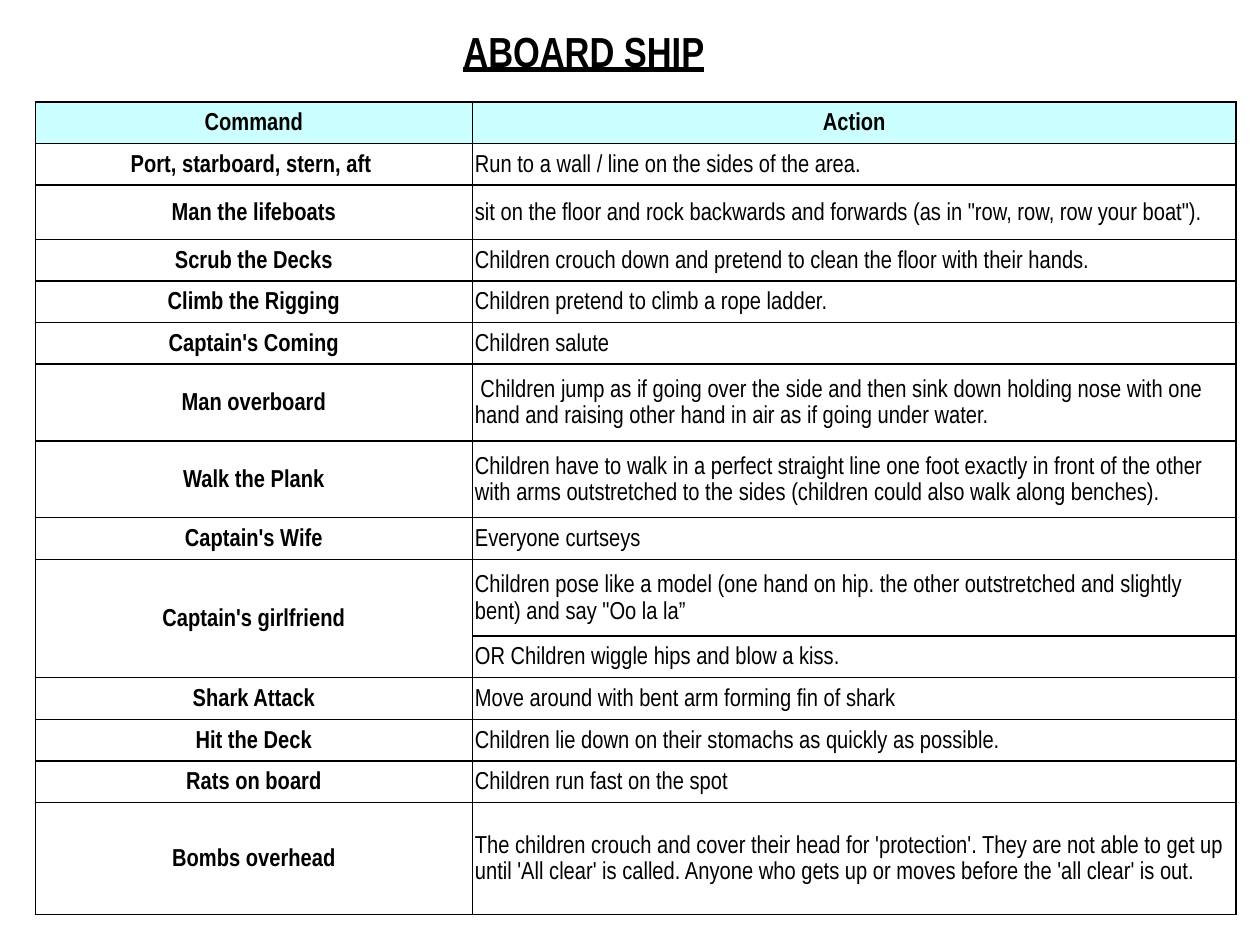
from pptx import Presentation
from pptx.dml.color import RGBColor
from pptx.enum.text import MSO_ANCHOR, PP_ALIGN
from pptx.oxml import parse_xml
from pptx.oxml.ns import nsdecls
from pptx.util import Inches, Pt

LEFT, CENTER = PP_ALIGN.LEFT, PP_ALIGN.CENTER
TOP, MIDDLE = MSO_ANCHOR.TOP, MSO_ANCHOR.MIDDLE

THEME = {
    "font": "Arial Narrow",
    "ink": RGBColor.from_string("000000"),
    "head": RGBColor.from_string("CCFFFF"),
    "title": 24,
    "body": 14,
}


def write(frame, text, size=THEME["body"], bold=False, line=False,
          align=LEFT, gap=None):
    frame.word_wrap = True
    para = frame.paragraphs[0]
    para.alignment = align
    para.line_spacing = gap
    run = para.add_run()
    run.text = text
    font = run.font
    font.name, font.size = THEME["font"], Pt(size)
    font.bold, font.underline = bold, line
    font.color.rgb = THEME["ink"]


def border(cell):
    props = cell._tc.get_or_add_tcPr()
    for pos, side in enumerate(("lnL", "lnR", "lnT", "lnB")):
        props.insert(pos, parse_xml(
            f'<a:{side} {nsdecls("a")} w="{Pt(1)}"><a:solidFill>'
            f'<a:srgbClr val="{THEME["ink"]}"/></a:solidFill></a:{side}>'))


# Command, action and row height; an empty command joins the row above
ROWS = [
    ("Command", "Action", 0.33),
    ("Port, starboard, stern, aft ",
     "Run to a wall / line on the sides of the area.", 0.33),
    ("Man the lifeboats",
     'sit on the floor and rock backwards and forwards '
     '(as in "row, row, row your boat").', 0.43),
    ("Scrub the Decks",
     "Children crouch down and pretend to clean the floor "
     "with their hands.", 0.33),
    ("Climb the Rigging", "Children pretend to climb a rope ladder.", 0.33),
    ("Captain's Coming", "Children salute", 0.33),
    ("Man overboard",
     " Children jump as if going over the side and then sink down holding "
     "nose with one hand and raising other hand in air as if going under "
     "water.", 0.61),
    ("Walk the Plank",
     "Children have to walk in a perfect straight line one foot exactly in "
     "front of the other with arms outstretched to the sides (children "
     "could also walk along benches).", 0.61),
    ("Captain's Wife", "Everyone curtseys", 0.33),
    ("Captain's girlfriend",
     "Children pose like a model (one hand on hip. the other outstretched "
     'and slightly bent) and say "Oo la la”', 0.61),
    ("", "OR Children wiggle hips and blow a kiss.", 0.33),
    ("Shark Attack", "Move around with bent arm forming fin of shark", 0.33),
    ("Hit the Deck",
     "Children lie down on their stomachs as quickly as possible.", 0.33),
    ("Rats on board", "Children run fast on the spot", 0.33),
    ("Bombs overhead",
     "The children crouch and cover their head for 'protection'. They are "
     "not able to get up until 'All clear' is called. Anyone who gets up or "
     "moves before the 'all clear' is out.", 0.89),
]
COLS = (3.47, 6.06)

deck = Presentation()
deck.slide_width, deck.slide_height = Inches(10), Inches(7.5)
slide = deck.slides.add_slide(deck.slide_layouts[6])

# Command table
high = sum(row[2] for row in ROWS)
grid = slide.shapes.add_table(len(ROWS), len(COLS), Inches(0.28), Inches(0.81),
                              Inches(sum(COLS)), Inches(high)).table
grid.horz_banding = False
for col, wide in zip(grid.columns, COLS):
    col.width = Inches(wide)

for r, (order, action, tall) in enumerate(ROWS):
    grid.rows[r].height = Inches(tall)
    for c, text in enumerate((order, action)):
        cell = grid.cell(r, c)
        cell.margin_left = cell.margin_right = Inches(0.02)
        cell.margin_top = cell.margin_bottom = Inches(0.02)
        cell.vertical_anchor = MIDDLE
        if r == 0:
            cell.fill.solid()
            cell.fill.fore_color.rgb = THEME["head"]
        else:
            cell.fill.background()
        border(cell)
        key = r == 0 or c == 0
        if text:
            write(cell.text_frame, text, bold=key, gap=1.15,
                  align=CENTER if key else LEFT)
        else:
            grid.cell(r - 1, c).merge(cell)

# Title
box = slide.shapes.add_textbox(Inches(3.58), Inches(0.15),
                               Inches(2.36), Inches(0.91))
box.text_frame.vertical_anchor = TOP
write(box.text_frame, "ABOARD SHIP", size=THEME["title"], bold=True, line=True)

deck.save("out.pptx")
